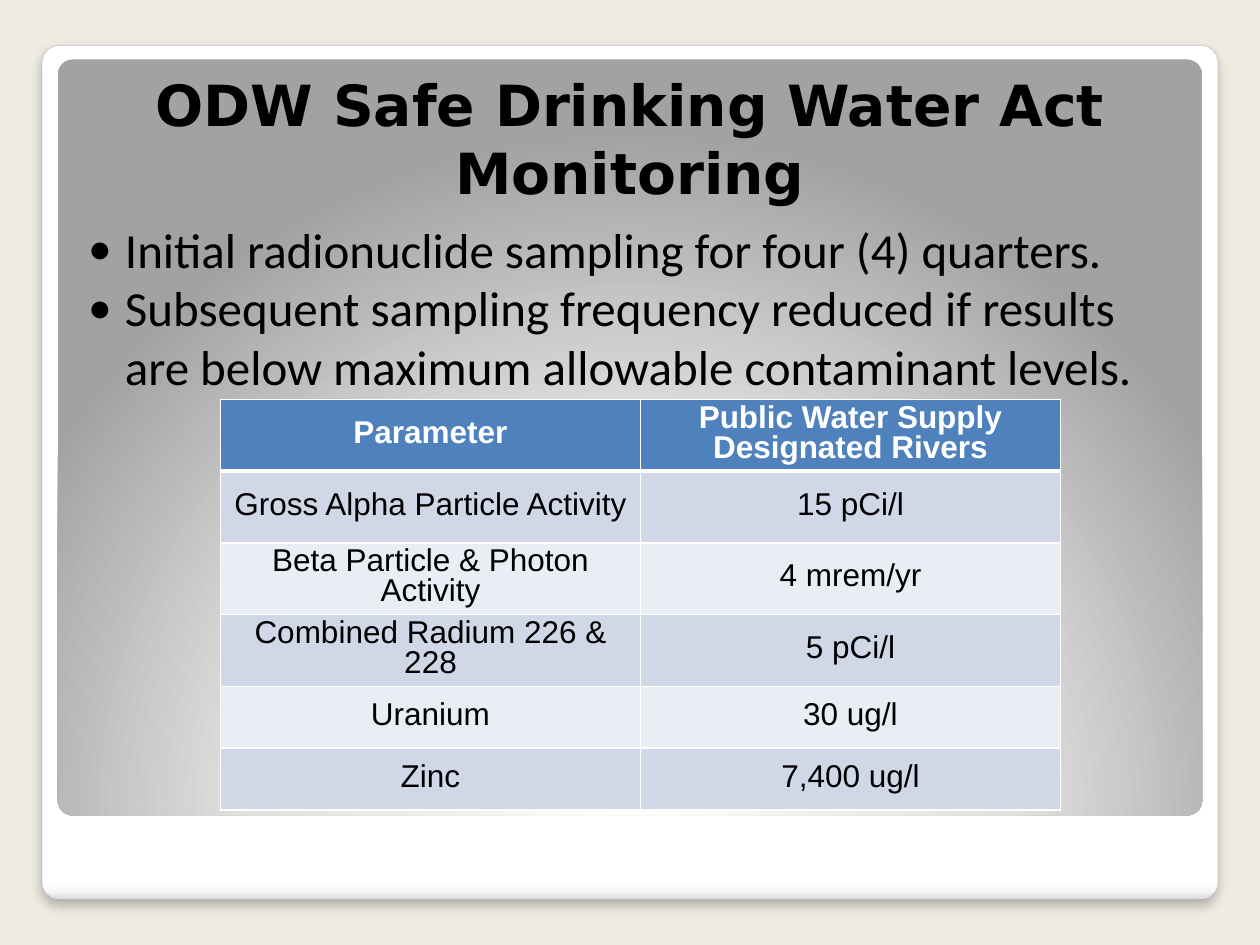
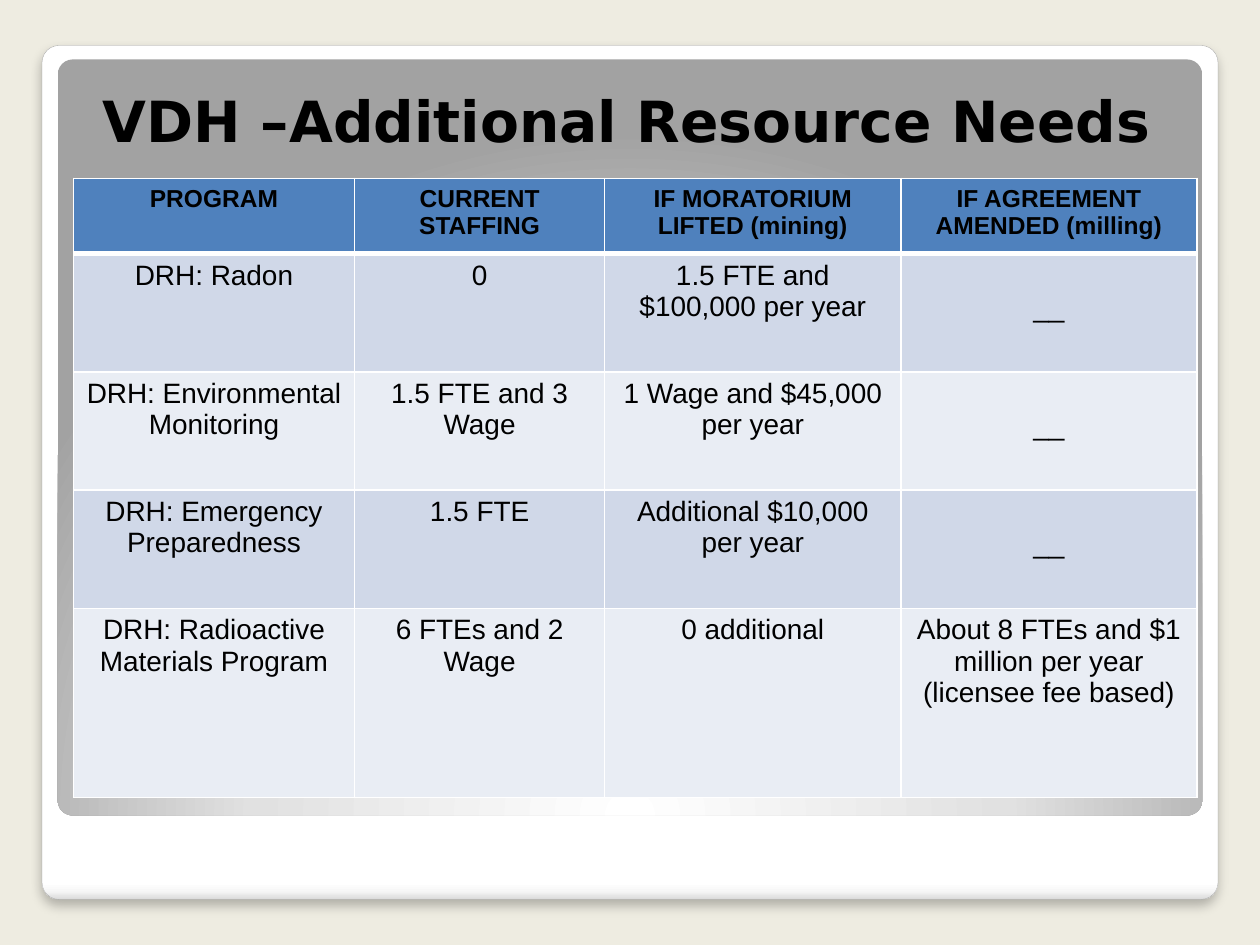
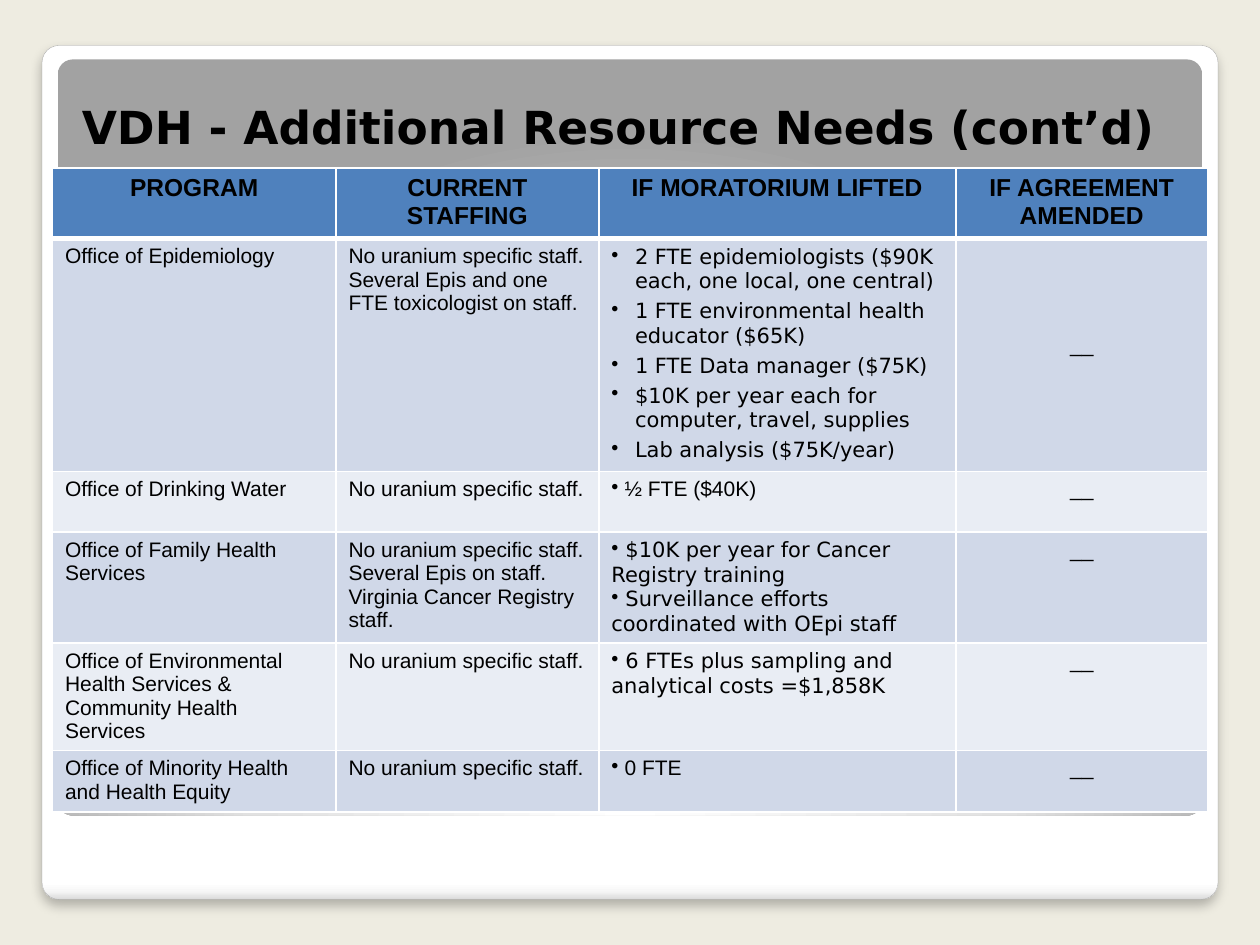
"""Build three slides on drinking water monitoring and staffing needs."""
from pptx import Presentation
from pptx.dml.color import RGBColor
from pptx.enum.shapes import MSO_SHAPE
from pptx.enum.text import MSO_ANCHOR, MSO_AUTO_SIZE, PP_ALIGN
from pptx.oxml import parse_xml
from pptx.oxml.ns import nsdecls, qn
from pptx.util import Pt

BLACK, WHITE, BACKDROP = "000000", "FFFFFF", "EEECE1"
HEADER, BANDS = "4F81BD", ("E9EDF4", "D0D8E8")
TITLE_FONT, BODY_FONT, TABLE_FONT = "DejaVu Sans", "Calibri", "Arial"
LEFT, CENTER = PP_ALIGN.LEFT, PP_ALIGN.CENTER


def paint(fill, color):
    fill.solid()
    fill.fore_color.rgb = RGBColor.from_string(color)


def write(para, text, size, font, color=BLACK, bold=False, align=LEFT,
          bullet="", bullet_percent=100, hanging=0, after=0, line=None):
    para.alignment = align
    para.space_before, para.space_after = Pt(0), Pt(after)
    if line:
        para.line_spacing = Pt(line)
    if bullet:
        settings = para._p.get_or_add_pPr()
        settings.set("marL", str(Pt(hanging)))
        settings.set("indent", str(-Pt(hanging)))
        settings.append(parse_xml(
            f'<a:buSzPct {nsdecls("a")} val="{bullet_percent * 1000}"/>'))
        settings.append(parse_xml(f'<a:buChar {nsdecls("a")} char="{bullet}"/>'))
    span = para.add_run()
    span.text = text
    span.font.name, span.font.size, span.font.bold = font, Pt(size), bold
    paint(span.font.fill, color)


pages = [
    {
        "title": "ODW Safe Drinking Water Act Monitoring",
        "title_place": (36, 41.76, 648, 77.76), "title_size": 32.4,
        "bullets": [
            "Initial radionuclide sampling for four (4) quarters.",
            "Subsequent sampling frequency reduced if results are below "
            "maximum allowable contaminant levels.",
        ],
        "corner": (126, 228.2), "columns": [240, 240],
        "heights": [41, 41, 41, 41, 35.3, 35.3],
        "margins": (5, 0), "anchor": MSO_ANCHOR.MIDDLE, "line": 17,
        "header_color": WHITE, "header_size": 18, "size": 18,
        "aligns": [CENTER] * 2,
        "rows": [
            ["Parameter", "Public Water Supply Designated Rivers"],
            ["Gross Alpha Particle Activity", "15 pCi/l"],
            ["Beta Particle & Photon Activity", "4 mrem/yr"],
            ["Combined Radium 226 & 228", "5 pCi/l"],
            ["Uranium", "30 ug/l"],
            ["Zinc", "7,400 ug/l"],
        ],
    },
    {
        "title": "VDH –Additional Resource Needs",
        "title_place": (36, 36, 644.4, 54), "title_size": 32.4,
        "corner": (42, 102), "columns": [160.6, 143, 169.2, 169.2],
        "heights": [43, 67.6, 67.6, 67.6, 108],
        "header_size": 14, "size": 16, "aligns": [CENTER] * 4,
        "dash_tops": {1: 22, 2: 22, 3: 22},
        "rows": [
            ["PROGRAM", "CURRENT STAFFING", "IF MORATORIUM LIFTED (mining)",
             "IF AGREEMENT AMENDED (milling)"],
            ["DRH: Radon", "0", "1.5 FTE and $100,000 per year", "__"],
            ["DRH: Environmental Monitoring", "1.5 FTE and 3 Wage",
             "1 Wage and $45,000 per year", "__"],
            ["DRH: Emergency Preparedness", "1.5 FTE",
             "Additional $10,000 per year", "__"],
            ["DRH: Radioactive Materials Program", "6 FTEs and 2 Wage",
             "0 additional",
             "About 8 FTEs and $1 million per year (licensee fee based)"],
        ],
    },
    {
        "title": "VDH - Additional Resource Needs (cont’d) ",
        "title_place": (36, 36, 644.4, 54), "title_size": 26,
        "corner": (30, 96), "columns": [162, 150.2, 204, 144],
        "heights": [40.3, 133.2, 34.5, 62.5, 61.5, 35],
        "header_size": 14, "size": 12, "aligns": [LEFT, LEFT, LEFT, CENTER],
        "dash_tops": {1: 54}, "title_font_rows": (1, 3, 4),
        "rows": [
            ["PROGRAM", "CURRENT STAFFING", "IF MORATORIUM LIFTED",
             "IF AGREEMENT AMENDED"],
            ["Office of Epidemiology",
             "No uranium specific staff. Several Epis and one FTE "
             "toxicologist on staff.",
             "•2 FTE epidemiologists ($90K each, one local, one central)\n"
             "•1 FTE environmental health educator ($65K)\n"
             "•1 FTE Data manager ($75K)\n"
             "•$10K per year each for computer, travel, supplies\n"
             "•Lab analysis ($75K/year)", "__"],
            ["Office of Drinking Water", "No uranium specific staff.",
             "• ½ FTE ($40K)", "__"],
            ["Office of Family Health Services",
             "No uranium specific staff. Several Epis on staff. "
             "Virginia Cancer Registry staff.",
             "• $10K per year for Cancer Registry training\n"
             "• Surveillance efforts coordinated with OEpi staff", "__"],
            ["Office of Environmental Health Services & Community Health "
             "Services", "No uranium specific staff.",
             "• 6 FTEs plus sampling and analytical costs =$1,858K", "__"],
            ["Office of Minority Health and Health Equity",
             "No uranium specific staff.", "• 0 FTE", "__"],
        ],
    },
]

deck = Presentation()
deck.slide_width, deck.slide_height = Pt(720), Pt(540)
master = deck.slide_master
paint(master.background.fill, BACKDROP)

for number, content in enumerate(pages):
    layout = deck.slide_layouts[1 if "bullets" in content else 5]
    page = deck.slides.add_slide(layout)

    if number == 0:
        frames = [
            ((24, 26, 672, 488),
             [(0, WHITE), (98, WHITE), (99, "F7F7F7"), (100, "DADADA")],
             '<a:lin ang="5400000" scaled="0"/>'),
            ((33, 34, 654, 432), [(0, WHITE), (55, "E1E1E1"), (100, "A2A2A2")],
             '<a:path path="circle"><a:fillToRect l="50000" t="175000" '
             'r="50000" b="-75000"/></a:path>'),
        ]
        for depth, (place, stops, direction) in enumerate(frames):
            frame = page.shapes.add_shape(MSO_SHAPE.ROUNDED_RECTANGLE, *map(Pt, place))
            frame.adjustments[0] = 0.02
            frame.shadow.inherit = False
            frame.fill.background()
            properties = frame.element.spPr
            stop_list = "".join(
                f'<a:gs pos="{percent * 1000}"><a:srgbClr val="{color}"/></a:gs>'
                for percent, color in stops)
            properties.replace(properties.find(qn("a:noFill")), parse_xml(
                f'<a:gradFill {nsdecls("a")} rotWithShape="1">'
                f'<a:gsLst>{stop_list}</a:gsLst>{direction}</a:gradFill>'))
            if depth == 0:
                paint(frame.line.fill, "A4A4A4")
                frame.line.width = Pt(0.16)
                properties.find(qn("a:effectLst")).append(parse_xml(
                    f'<a:outerShdw {nsdecls("a")} blurRad="{Pt(6)}" dist="{Pt(4)}" '
                    f'dir="5400000" algn="tl" rotWithShape="0"><a:srgbClr val="{BLACK}">'
                    '<a:alpha val="25000"/></a:srgbClr></a:outerShdw>'))
            else:
                frame.line.fill.background()
            master.shapes.element.insert(2 + depth, frame.element)

    title = page.shapes.title
    title.left, title.top, title.width, title.height = map(Pt, content["title_place"])
    title.text_frame.auto_size = MSO_AUTO_SIZE.NONE
    title.text_frame.vertical_anchor = MSO_ANCHOR.BOTTOM
    title.text_frame.margin_bottom = Pt(2)
    write(title.text_frame.paragraphs[0], content["title"], content["title_size"],
          TITLE_FONT, bold=True, align=CENTER)

    if "bullets" in content:
        body = page.placeholders[1]
        body.left, body.top, body.width, body.height = map(Pt, (36, 118, 648, 344))
        body.text_frame.auto_size = MSO_AUTO_SIZE.NONE
        body.text_frame.margin_left, body.text_frame.margin_top = Pt(14.4), Pt(7.2)
        for index, text in enumerate(content["bullets"]):
            para = (body.text_frame.add_paragraph() if index
                    else body.text_frame.paragraphs[0])
            write(para, text, 28, BODY_FONT, bullet="●", bullet_percent=80, hanging=21)

    rows, widths, heights = content["rows"], content["columns"], content["heights"]
    table = page.shapes.add_table(
        len(rows), len(widths), *map(Pt, content["corner"]),
        Pt(sum(widths)), Pt(sum(heights))).table
    for column, width in zip(table.columns, widths):
        column.width = Pt(width)
    for row, height in zip(table.rows, heights):
        row.height = Pt(height)

    side, edge = content.get("margins", (7.2, 3.6))
    for row_index, row in enumerate(rows):
        is_header = row_index == 0
        for column_index, text in enumerate(row):
            cell = table.cell(row_index, column_index)
            paint(cell.fill, HEADER if is_header else BANDS[row_index % 2])
            borders = {"lnL": 1, "lnR": 1, "lnT": 3 if row_index == 1 else 1,
                       "lnB": 3 if is_header else 1}
            for position, (border, thickness) in enumerate(borders.items()):
                cell._tc.get_or_add_tcPr().insert(position, parse_xml(
                    f'<a:{border} {nsdecls("a")} w="{Pt(thickness)}"><a:solidFill>'
                    f'<a:srgbClr val="{WHITE}"/></a:solidFill></a:{border}>'))
            cell.margin_left = cell.margin_right = Pt(side)
            cell.margin_top = cell.margin_bottom = Pt(edge)
            if text == "__":
                cell.margin_top = Pt(content.get("dash_tops", {}).get(row_index, edge))
            cell.vertical_anchor = content.get("anchor", MSO_ANCHOR.TOP)
            for index, item in enumerate(text.split("\n")):
                para = (cell.text_frame.add_paragraph() if index
                        else cell.text_frame.paragraphs[0])
                bulleted = item.startswith("•")
                hangs = bulleted and not item.startswith("• ")
                wide = bulleted and row_index in content["title_font_rows"]
                write(para, item.removeprefix("•"),
                      content["header_size"] if is_header else content["size"],
                      TITLE_FONT if wide else TABLE_FONT,
                      color=content.get("header_color", BLACK) if is_header else BLACK,
                      bold=is_header,
                      align=CENTER if is_header else content["aligns"][column_index],
                      bullet="•" if bulleted else "",
                      hanging=13.5 if hangs else 0, after=3 if hangs else 0,
                      line=content.get("line"))

deck.save("out.pptx")
